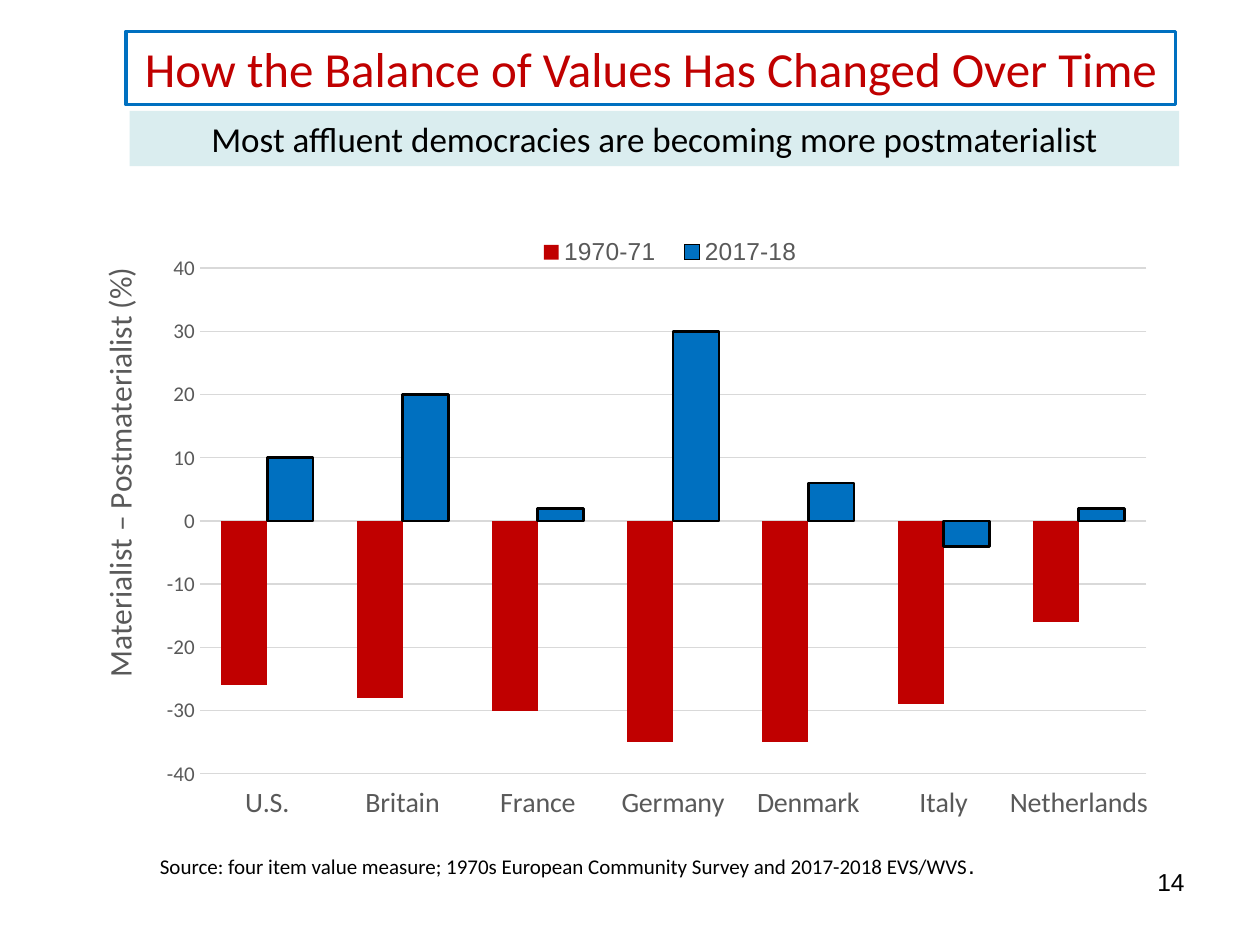
import pptx
import pptx.util
import pptx.dml.color
import pptx.chart.data
import pptx.enum.chart
import pptx.enum.shapes
import pptx.enum.text
import pptx.oxml.ns
import lxml.etree

Pt = pptx.util.Pt
ALIGN = pptx.enum.text.PP_ALIGN
ANCHOR = pptx.enum.text.MSO_ANCHOR
CHART = pptx.enum.chart
HUES = {"red": "C00000", "blue": "0070C0", "pale": "DAEDEF",
        "black": "000000", "gray": "595959", "rule": "D9D9D9"}
COLS, ROWS = 100, 75


def hue(name):
    """Return the named colour."""
    return pptx.dml.color.RGBColor.from_string(HUES[name])


def style(font, size, color, face="Calibri"):
    """Set the size, colour and face of a font."""
    font.size, font.name, font.bold = Pt(size), face, False
    font.color.rgb = hue(color)


def stroke(line, color, width):
    """Draw a solid line."""
    line.color.rgb, line.width = hue(color), Pt(width)


def write(shape, text, size, color, align, face="Calibri"):
    """Fill a shape with one styled paragraph."""
    frame = shape.text_frame
    frame.text, frame.word_wrap = text, True
    para = frame.paragraphs[0]
    para.alignment = align
    style(para.runs[0].font, size, color, face)
    return para


def put(node, spot, **share):
    """Give a chart part a manual layout in shares of the chart."""
    qn = pptx.oxml.ns.qn
    for old in node.findall(qn("c:layout")):
        node.remove(old)
    lay = lxml.etree.Element(qn("c:layout"))
    man = lxml.etree.SubElement(lay, qn("c:manualLayout"))
    for key, val in share.items():
        lxml.etree.SubElement(man, qn("c:" + key)).set("val", str(val))
    node.insert(spot, lay)


def head(slide, box):
    """Place the outlined title."""
    title = slide.shapes.title
    title.left, title.top, title.width, title.height = box
    write(title, "How the Balance of Values Has Changed Over Time",
          28, "red", ALIGN.CENTER)
    title.text_frame.vertical_anchor = ANCHOR.MIDDLE
    title.text_frame.auto_size = pptx.enum.text.MSO_AUTO_SIZE.NONE
    stroke(title.line, "blue", 2.25)


def band(slide, box):
    """Place the tinted subtitle band."""
    shape = slide.shapes.add_shape(pptx.enum.shapes.MSO_SHAPE.RECTANGLE, *box)
    shape.shadow.inherit = False
    shape.fill.solid()
    shape.fill.fore_color.rgb = hue("pale")
    shape.line.fill.background()
    write(shape, "Most affluent democracies are becoming more postmaterialist",
          20, "black", ALIGN.CENTER)


def axes(chart):
    """Format both axes and the value title."""
    cat, val = chart.category_axis, chart.value_axis
    for axis, size in ((cat, 16), (val, 12)):
        axis.major_tick_mark = axis.minor_tick_mark = CHART.XL_TICK_MARK.NONE
        style(axis.tick_labels.font, size, "gray")
    cat.tick_label_position = CHART.XL_TICK_LABEL_POSITION.LOW
    stroke(cat.format.line, "rule", 0.75)
    val.format.line.fill.background()
    stroke(val.major_gridlines.format.line, "rule", 0.75)
    val.minimum_scale, val.maximum_scale, val.major_unit = -40, 40, 10
    title = val.axis_title
    title.text_frame.text = "Materialist – Postmaterialist (%)"
    style(title.text_frame.paragraphs[0].runs[0].font, 18, "gray")
    turn = title._element.xpath("c:tx/c:rich/a:bodyPr")[0]
    turn.set("rot", "-5400000")
    turn.set("vert", "horz")
    put(title._element, 1, xMode="edge", yMode="edge", x=0.03, y=0.1)


def graph(slide, box):
    """Place the column chart of value balances."""
    data = pptx.chart.data.CategoryChartData()
    data.categories = ["U.S.", "Britain", "France", "Germany",
                       "Denmark", "Italy", "Netherlands"]
    data.add_series("1970-71", (-26, -28, -30, -35, -35, -29, -16))
    data.add_series("2017-18", (10, 20, 2, 30, 6, -4, 2))
    kind = CHART.XL_CHART_TYPE.COLUMN_CLUSTERED
    chart = slide.shapes.add_chart(kind, *box, data).chart
    style(chart.font, 10, "black", "Arial")
    chart.has_title = False
    plot = chart.plots[0]
    plot.gap_width, plot.overlap, plot.vary_by_categories = 95, 0, False
    for bars, color in zip(plot.series, ("red", "blue")):
        bars.invert_if_negative = False
        bars.format.fill.solid()
        bars.format.fill.fore_color.rgb = hue(color)
    stroke(plot.series[1].format.line, "black", 1.5)
    axes(chart)
    chart.has_legend = True
    key = chart.legend
    key.position = CHART.XL_LEGEND_POSITION.BOTTOM
    key.include_in_layout = False
    style(key.font, 14, "gray", "Arial")
    put(key._element, 1, xMode="edge", yMode="edge",
        x=0.41, y=0.05, w=0.26, h=0.07)
    area = chart._chartSpace.xpath("c:chart/c:plotArea")[0]
    put(area, 0, layoutTarget="inner", xMode="edge", yMode="edge",
        x=0.125, y=0.11, w=0.835, h=0.79)


def source(slide, box):
    """Place the source line."""
    para = write(slide.shapes.add_textbox(*box),
                 "Source: four item value measure; 1970s European Community "
                 "Survey and 2017-2018 EVS/WVS", 12, "black", ALIGN.LEFT)
    stop = para.add_run()
    stop.text = "."
    style(stop.font, 14, "black", "Arial")


def page(slide, box):
    """Place the page number."""
    write(slide.shapes.add_textbox(*box), "14", 14, "black",
          ALIGN.RIGHT, "Arial")


def main():
    """Build and save the slide."""
    deck = pptx.Presentation()
    deck.slide_width, deck.slide_height = pptx.util.Inches(10), pptx.util.Inches(7.5)
    wide, high = deck.slide_width / COLS, deck.slide_height / ROWS
    slide = deck.slides.add_slide(deck.slide_layouts[5])
    parts = ((head, (10, 2.5, 83.3, 5.8)),
             (graph, (4.6, 15.7, 90, 50.8)),
             (source, (11.7, 67, 75.8, 3.4)),
             (page, (71.7, 68.3, 23.3, 5.2)),
             (band, (10.3, 8.8, 83.3, 4.4)))
    for draw, (left, top, width, height) in parts:
        draw(slide, [round(n) for n in (left * wide, top * high,
                                        width * wide, height * high)])
    deck.save("out.pptx")


if __name__ == "__main__":
    main()
